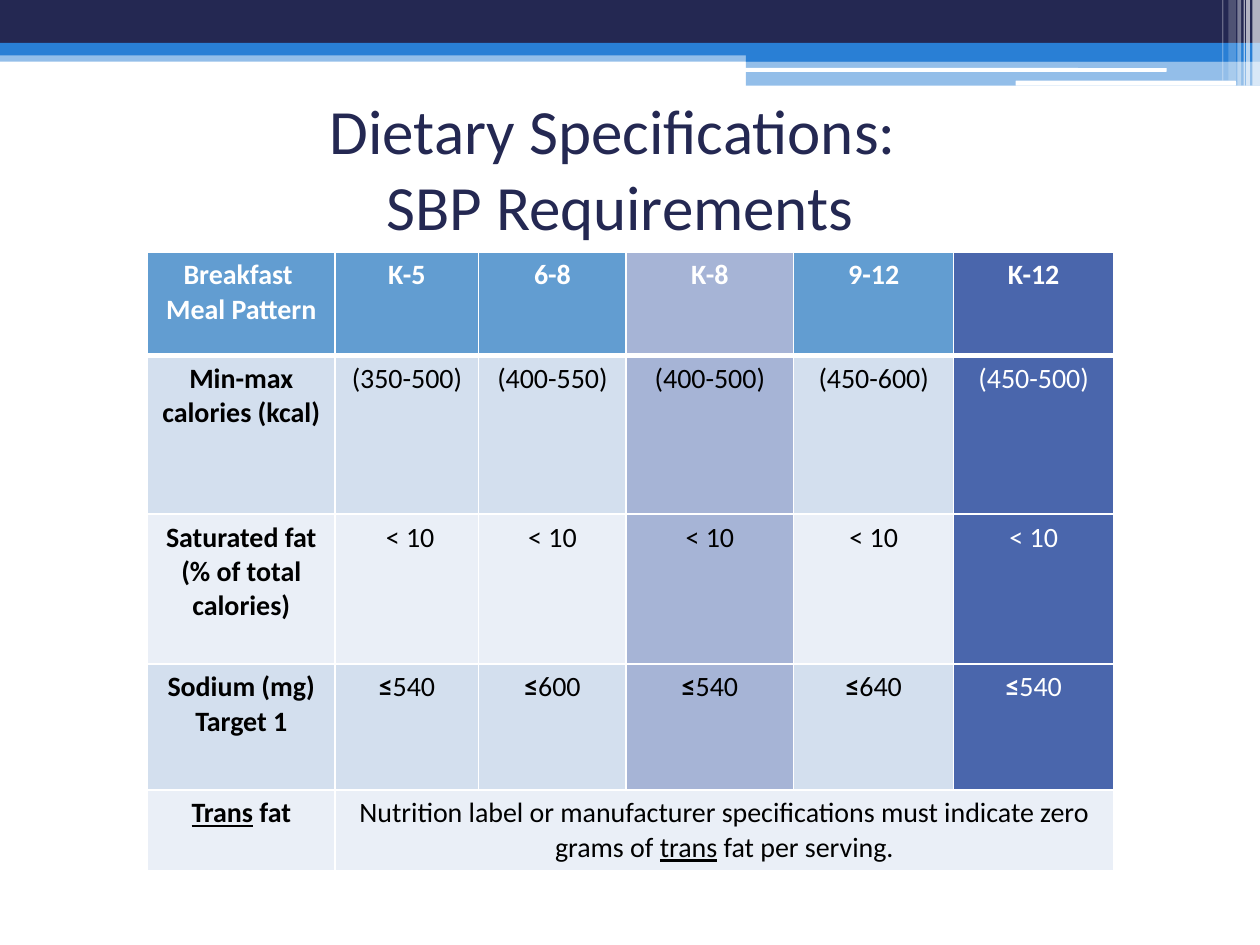
"""Build the school breakfast dietary specifications slide."""
from lxml import etree
from pptx import Presentation
from pptx.dml.color import RGBColor
from pptx.enum.shapes import MSO_SHAPE
from pptx.enum.text import MSO_ANCHOR, MSO_AUTO_SIZE, PP_ALIGN
from pptx.oxml.ns import qn
from pptx.util import Inches, Pt

RECT, ROUNDED = MSO_SHAPE.RECTANGLE, MSO_SHAPE.ROUNDED_RECTANGLE
CENTER, MIDDLE, NO_FIT = PP_ALIGN.CENTER, MSO_ANCHOR.MIDDLE, MSO_AUTO_SIZE.NONE
FONT = "Calibri"

COLORS = {
    "navy": "242852", "blue": "297FD5", "white": "FFFFFF", "black": "000000",
    "header": "629DD1", "indigo": "4A66AC", "band": "D3DFEE", "pale": "EAEFF7",
}

TITLE = "Dietary Specifications: \vSBP Requirements"

BANDS = [
    (RECT, 0, 0.4, 10, 0.09, "blue", 50),
    (RECT, 0, 0, 10, 0.34, "navy", 100),
    (RECT, 0, 0.34, 10, 0.1, "blue", 100),
    (RECT, 5.92, 0.39, 4.08, 0.1, "blue", 100),
    (RECT, 5.92, 0.48, 4.08, 0.2, "blue", 50),
    (ROUNDED, 5.91, 0.54, 3.35, 0.03, "white", 100),
    (ROUNDED, 8.06, 0.64, 1.75, 0.04, "white", 100),
    (RECT, 9.94, 0, 0.06, 0.68, "white", 65),
    (RECT, 9.89, 0, 0.03, 0.68, "white", 65),
    (RECT, 9.87, 0, 0.01, 0.68, "white", 60),
    (RECT, 9.82, 0, 0.03, 0.68, "white", 40),
    (RECT, 9.75, 0, 0.06, 0.64, "white", 20),
    (RECT, 9.7, 0, 0.01, 0.64, "white", 30),
]

COLUMN_WIDTHS = [1.49, 1.14, 1.17, 1.33, 1.27, 1.27]
ROW_HEIGHTS = [0.82, 1.26, 1.19, 1, 0.64]
ROW_FILLS = ["header", "band", "pale", "band", "pale"]
COLUMN_FILLS = {3: ("indigo", 49), 5: ("indigo", 100)}
RUN_MARK = "|"
ROWS = [
    ["Breakfast \nMeal Pattern", "K-5", "6-8", "K-8", "9-12", "K-12"],
    ["Min-max calories (kcal) ", "(350-500)", "(400-550)", "(400-500)",
     "(450-600)", "(450-500)"],
    ["Saturated fat (% of total calories)", " < 10", "< 10", "< 10", "< 10", "< 10"],
    ["Sodium (mg)\nTarget 1", "≤|540", "≤|600", "≤|540", "≤|640", "≤|540"],
    ["Trans| fat", "Nutrition label or manufacturer specifications must indicate "
     "zero grams of |trans| fat per serving."],
]


def rgb(name):
    """Return the named colour."""
    return RGBColor.from_string(COLORS[name])


def paint(fill, properties, name, opacity):
    """Fill a shape or cell with a colour at an opacity in percent."""
    fill.solid()
    fill.fore_color.rgb = rgb(name)
    if opacity < 100:
        color = properties.find(qn("a:solidFill")).find(qn("a:srgbClr"))
        etree.SubElement(color, qn("a:alpha"), val=str(opacity * 1000))


def add_band(page, kind, left, top, width, height, name, opacity):
    """Add one strip of the page header."""
    band = page.shapes.add_shape(
        kind, Inches(left), Inches(top), Inches(width), Inches(height))
    band.shadow.inherit = False
    band.line.fill.background()
    paint(band.fill, band.element.spPr, name, opacity)


def add_title(page):
    """Place and format the title."""
    title = page.shapes.title
    title.left, title.top = Inches(0.42), Inches(0.83)
    title.width, title.height = Inches(9), Inches(1)
    frame = title.text_frame
    frame.text = TITLE
    frame.auto_size, frame.vertical_anchor = NO_FIT, MIDDLE
    para = frame.paragraphs[0]
    para.alignment = CENTER
    para.font.name, para.font.size = FONT, Pt(36)
    para.font.color.rgb = rgb("navy")


def add_borders(properties, row):
    """Draw white cell borders, thick between the header and the body."""
    thick = {0: "lnB", 1: "lnT"}.get(row)
    for side in ("lnL", "lnR", "lnT", "lnB"):
        width = Pt(3 if side == thick else 1)
        line = etree.SubElement(properties, qn("a:" + side), w=str(width))
        solid = etree.SubElement(line, qn("a:solidFill"))
        etree.SubElement(solid, qn("a:srgbClr"), val=COLORS["white"])


def write_cell(cell, text, row, column):
    """Write centred paragraphs, splitting each into runs at the mark."""
    frame = cell.text_frame
    for index, line in enumerate(text.split("\n")):
        para = frame.add_paragraph() if index else frame.paragraphs[0]
        para.alignment = CENTER
        para.font.name, para.font.size = FONT, Pt(16)
        para.font.color.rgb = rgb("white" if row == 0 or column == 5 else "black")
        for piece in line.split(RUN_MARK):
            span = para.add_run()
            span.text = piece
            span.font.bold = row == 0 or column == 0 or piece == "≤"
            span.font.underline = piece.lower() == "trans"


def add_requirements(page):
    """Add the table of breakfast requirements."""
    table = page.shapes.add_table(
        len(ROW_HEIGHTS), len(COLUMN_WIDTHS), Inches(1.17), Inches(2),
        Inches(sum(COLUMN_WIDTHS)), Inches(sum(ROW_HEIGHTS))).table
    table.first_row = table.horz_banding = False
    for column, width in zip(table.columns, COLUMN_WIDTHS):
        column.width = Inches(width)
    for row, height in zip(table.rows, ROW_HEIGHTS):
        row.height = Inches(height)
    for row, texts in enumerate(ROWS):
        for column, text in enumerate(texts):
            cell = table.cell(row, column)
            write_cell(cell, text, row, column)
            properties = cell._tc.get_or_add_tcPr()
            add_borders(properties, row)
            name, opacity = COLUMN_FILLS.get(column, (ROW_FILLS[row], 100))
            paint(cell.fill, properties, name, opacity)
    last = len(ROWS) - 1
    table.cell(last, 1).merge(table.cell(last, len(COLUMN_WIDTHS) - 1))


def main():
    """Build and save the deck."""
    deck = Presentation()
    deck.slide_width, deck.slide_height = Inches(10), Inches(7.5)
    page = deck.slides.add_slide(deck.slide_layouts[5])
    for band in BANDS:
        add_band(page, *band)
    add_title(page)
    add_requirements(page)
    deck.save("out.pptx")


if __name__ == "__main__":
    main()
